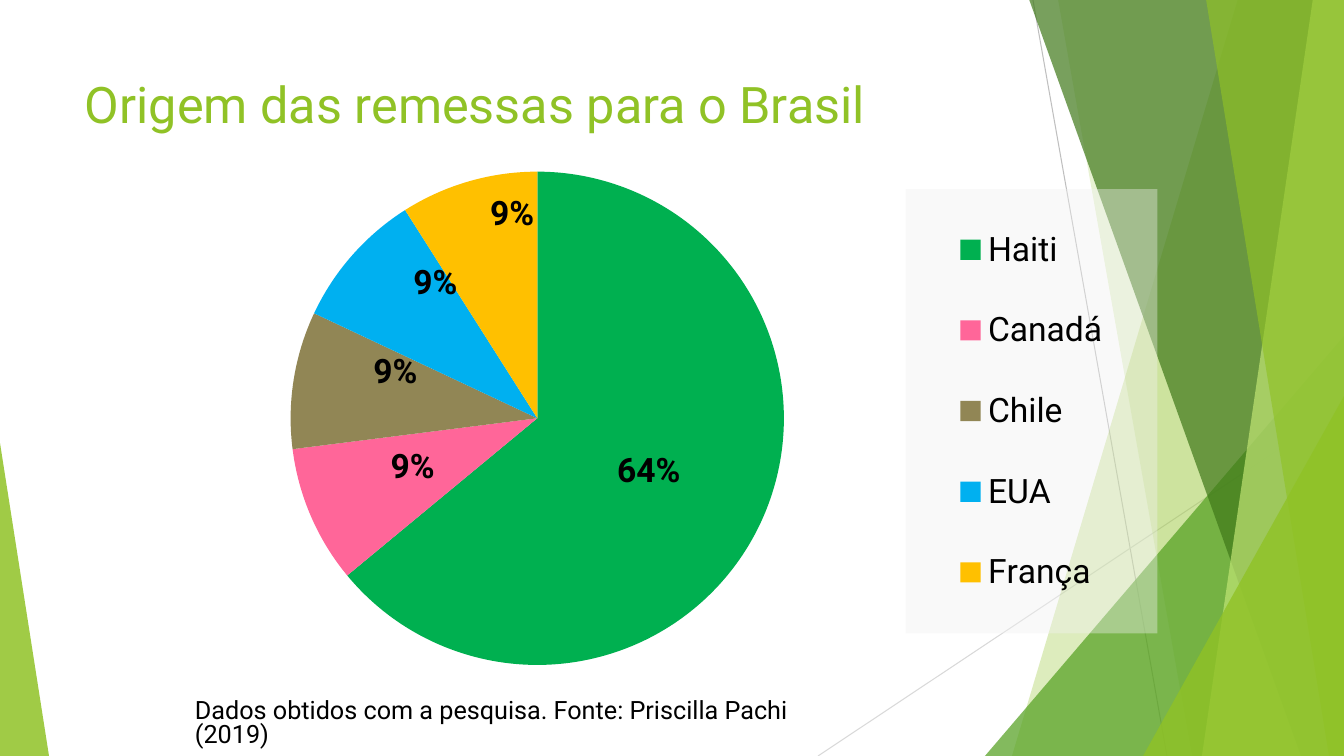
from dataclasses import dataclass

from lxml import etree
from pptx import Presentation
from pptx.chart.data import CategoryChartData
from pptx.dml.color import RGBColor
from pptx.enum.chart import XL_CHART_TYPE, XL_LABEL_POSITION, XL_LEGEND_POSITION
from pptx.enum.shapes import MSO_CONNECTOR, MSO_SHAPE
from pptx.oxml import parse_xml
from pptx.oxml.ns import nsdecls, qn
from pptx.util import Emu, Pt

PIE = XL_CHART_TYPE.PIE
LABEL_CENTER = XL_LABEL_POSITION.CENTER
LEGEND_RIGHT = XL_LEGEND_POSITION.RIGHT
STRAIGHT = MSO_CONNECTOR.STRAIGHT
TRIANGLE = MSO_SHAPE.ISOSCELES_TRIANGLE

WIDTH, HEIGHT = 1344, 756
EMU_PER_PX = 12192000 / WIDTH


@dataclass(frozen=True)
class Theme:
    font: str = "Roboto"
    text: str = "000000"
    lime: str = "90C226"
    green: str = "54A021"
    forest: str = "3F7819"
    pale: str = "C0E474"
    line: str = "BFBFBF"
    faint_line: str = "D9D9D9"
    legend_panel: str = "F2F2F2"
    title_size: int = 36
    chart_size: int = 24
    note_size: int = 18


def px(value):
    return Emu(round(value * EMU_PER_PX))


def manual_layout(x, y, width=None, height=None, inner=False):
    parts = [("layoutTarget", "inner")] if inner else []
    if width is not None:
        parts += [("xMode", "edge"), ("yMode", "edge")]
    parts += [("x", x), ("y", y)]
    if width is not None:
        parts += [("w", width), ("h", height)]
    body = "".join(f'<c:{name} val="{value}"/>' for name, value in parts)
    return parse_xml(
        f'<c:layout {nsdecls("c")}><c:manualLayout>{body}</c:manualLayout></c:layout>'
    )


def replace_layout(parent, layout, index):
    for old in parent.findall(qn("c:layout")):
        parent.remove(old)
    parent.insert(index, layout)


class SlideBuilder:
    def __init__(self, slide, theme):
        self.slide = slide
        self.theme = theme

    def line(self, start, end, color):
        connector = self.slide.shapes.add_connector(STRAIGHT, *map(px, start + end))
        connector.line.color.rgb = RGBColor.from_string(color)
        connector.line.width = Pt(0.75)
        etree.SubElement(connector._element.spPr, qn("a:effectLst"))

    def paint(self, shape, color, opacity):
        shape.shadow.inherit = False
        shape.fill.solid()
        shape.fill.fore_color.rgb = RGBColor.from_string(color)
        shape.line.fill.background()
        color_element = shape._element.spPr.find(".//" + qn("a:srgbClr"))
        etree.SubElement(color_element, qn("a:alpha"), val=str(opacity * 1000))

    def band(self, top_left, top_right, bottom_left, color, opacity):
        builder = self.slide.shapes.build_freeform(top_left, -1, scale=EMU_PER_PX)
        builder.add_line_segments(
            [(top_right, -1), (WIDTH, HEIGHT), (bottom_left, HEIGHT)]
            if top_right != WIDTH
            else [(WIDTH, -1), (WIDTH, HEIGHT), (bottom_left, HEIGHT)]
        )
        self.paint(builder.convert_to_shape(), color, opacity)

    def triangle(self, left, top, width, apex, color, opacity):
        shape = self.slide.shapes.add_shape(
            TRIANGLE, px(left), px(top), px(width), px(HEIGHT - top)
        )
        shape.adjustments[0] = apex
        self.paint(shape, color, opacity)

    def style_font(self, font, size, color):
        font.name = self.theme.font
        font.size = Pt(size)
        font.color.rgb = RGBColor.from_string(color)

    def text(self, box, wording, size, color, spacing=1.0):
        frame = self.slide.shapes.add_textbox(*map(px, box)).text_frame
        frame.word_wrap = True
        paragraph = frame.paragraphs[0]
        paragraph.text = wording
        paragraph.line_spacing = spacing
        self.style_font(paragraph.font, size, color)

    def pie(self, box, slices):
        theme = self.theme
        data = CategoryChartData()
        data.categories = [name for name, *_ in slices]
        data.add_series("Series 1", [value for _, value, *_ in slices])
        chart = self.slide.shapes.add_chart(PIE, *map(px, box), data).chart
        chart.has_title = False
        self.style_font(chart.font, theme.chart_size, theme.text)
        replace_layout(
            chart._chartSpace.chart.plotArea,
            manual_layout(0.001, 0.074, 0.79, 0.855, inner=True),
            0,
        )
        plot = chart.plots[0]
        plot.vary_by_categories = True
        series = plot.series[0]
        labels = series.data_labels
        labels.show_value = False
        labels.show_percentage = True
        labels.position = LABEL_CENTER
        self.style_font(labels.font, theme.chart_size, theme.text)
        labels.font.bold = True
        for index, (_, _, color, shift) in enumerate(slices):
            point = series.points[index]
            point.format.fill.solid()
            point.format.fill.fore_color.rgb = RGBColor.from_string(color)
            point.format.line.fill.background()
            if shift:
                label = point.data_label
                self.style_font(label.font, theme.chart_size, theme.text)
                label.font.bold = True
                label.position = LABEL_CENTER
                element = series._element.xpath(f".//c:dLbl[c:idx/@val='{index}']")[0]
                element.find(qn("c:showVal")).set("val", "0")
                element.find(qn("c:showPercent")).set("val", "1")
                x, y = (round(d / size, 3) for d, size in zip(shift, box[2:]))
                replace_layout(element, manual_layout(x, y), 1)
        self.legend(chart)

    def legend(self, chart):
        chart.has_legend = True
        legend = chart.legend
        legend.position = LEGEND_RIGHT
        legend.include_in_layout = False
        self.style_font(legend.font, self.theme.chart_size, self.theme.text)
        element = legend._element
        replace_layout(element, manual_layout(0.747, 0.104, 0.24, 0.77), 1)
        panel = parse_xml(
            f'<c:spPr {nsdecls("c", "a")}><a:solidFill>'
            f'<a:srgbClr val="{self.theme.legend_panel}"><a:alpha val="39000"/></a:srgbClr>'
            "</a:solidFill><a:ln><a:noFill/></a:ln></c:spPr>"
        )
        element.find(qn("c:overlay")).addnext(panel)


def main():
    presentation = Presentation()
    presentation.slide_width = px(WIDTH)
    presentation.slide_height = px(HEIGHT)
    slide = presentation.slides.add_slide(presentation.slide_layouts[6])
    theme = Theme()
    builder = SlideBuilder(slide, theme)

    builder.line((1033, 0), (1167, HEIGHT), theme.line)
    builder.line((WIDTH, 406), (818, HEIGHT), theme.faint_line)
    builder.band(1238, WIDTH, 1012, theme.lime, 30)
    builder.band(1058, WIDTH, 1192, theme.lime, 20)
    builder.triangle(985, 336, 359, 1, theme.green, 72)
    builder.band(1029, WIDTH, 1301, theme.forest, 70)
    builder.band(1313, WIDTH, 1202, theme.pale, 70)
    builder.band(1206, WIDTH, 1329, theme.lime, 65)
    builder.triangle(1143, 396, 201, 1, theme.lime, 80)
    builder.triangle(0, 443, 49, 0, theme.lime, 85)

    builder.text((75, 68, 948, 145), "Origem das remessas para o Brasil",
                 theme.title_size, theme.lime)
    builder.pie((122, 129, 1049, 577), [
        ("Haiti", 64, "00B050", None),
        ("Canadá", 9, "FF6699", (-12, 0)),
        ("Chile", 9, "918655", (-20, -27)),
        ("EUA", 9, "00B0F0", (-9, -54)),
        ("França", 9, "FFC000", (9, -86)),
    ])
    builder.text((185, 695, 672, 59),
                 "Dados obtidos com a pesquisa. Fonte: Priscilla Pachi (2019)",
                 theme.note_size, theme.text, 0.8)
    presentation.save("out.pptx")


if __name__ == "__main__":
    main()
